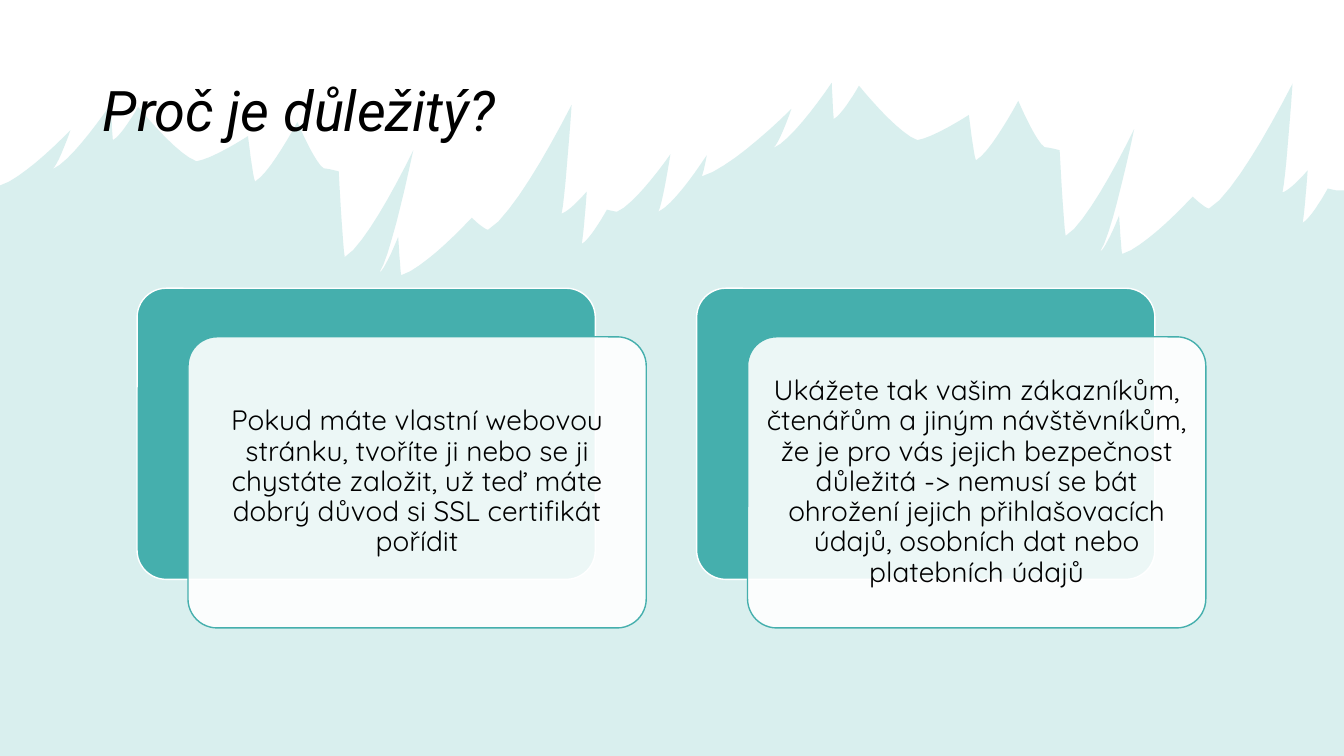
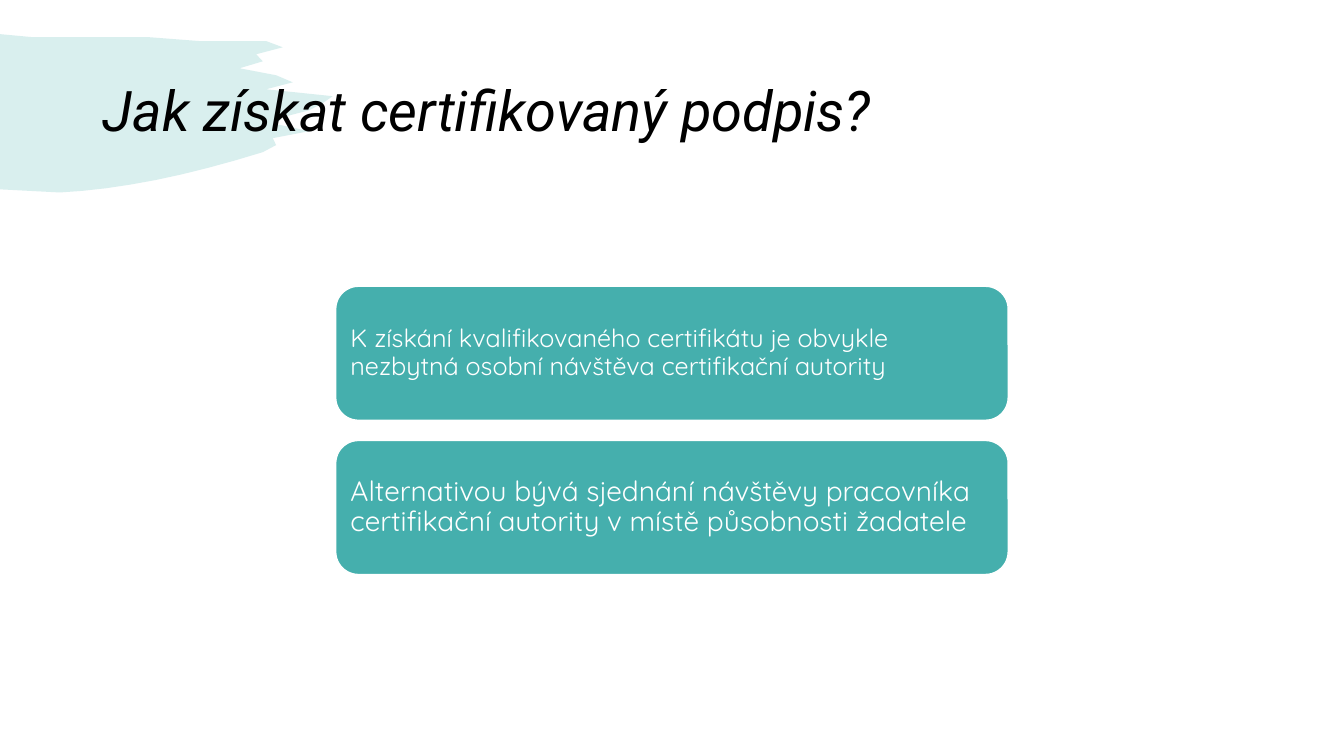
from collections import namedtuple

from lxml.etree import SubElement
from pptx import Presentation
from pptx.dml.color import RGBColor
from pptx.enum.shapes import MSO_SHAPE
from pptx.enum.text import MSO_ANCHOR, MSO_AUTO_SIZE, PP_ALIGN
from pptx.oxml.ns import qn
from pptx.util import Inches, Pt

TEAL = RGBColor(0x45, 0xAF, 0xAD)
WHITE = RGBColor(0xFF, 0xFF, 0xFF)
BLACK = RGBColor(0x00, 0x00, 0x00)
TITLE_FONT = "Roboto"
BODY_FONT = "Quicksand"
TITLE_ONLY = 5
UNITS_PER_INCH = 1000
CURVE_STEPS = 8

Box = namedtuple("Box", "left top width height")
Point = namedtuple("Point", "x y")
Spike = namedtuple("Spike", "tip notch")

SLIDE = Box(0, 0, 13.33, 7.5)
TITLE_BOX = Box(0.92, 0.4, 11.5, 1.45)
CARDS_BOX = Box(1.36, 2.86, 10.6, 3.37)
BARS_BOX = Box(3.33, 2.84, 6.67, 2.86)
BRUSH_BOX = Box(0, 0.37, 3.3, 1.54)

SPLASH_START = Point(0, 1.84)
SPLASH_PERIOD = Point(7.15, -0.21)
SPLASH_BEND = 1.3
SPIKES = [
    Spike(Point(0.7, 1.29), Point(0.52, 1.68)),
    Spike(Point(1.1, 1.03), Point(1.12, 1.39)),
    Spike(Point(1.37, 1.06), Point(1.95, 1.6)),
    Spike(Point(2.46, 1.35), Point(2.53, 1.8)),
    Spike(Point(2.95, 1.21), Point(3.21, 1.67)),
    Spike(Point(3.36, 1.7), Point(3.42, 2.55)),
    Spike(Point(4.1, 1.49), Point(3.76, 2.71)),
    Spike(Point(3.95, 2.35), Point(3.98, 2.73)),
    Spike(Point(4.68, 2.16), Point(4.84, 2.28)),
    Spike(Point(5.67, 1.04), Point(5.57, 2.12)),
    Spike(Point(5.82, 1.9), Point(5.77, 2.42)),
    Spike(Point(6.02, 2.08), Point(6.12, 2.1)),
    Spike(Point(6.65, 1.53), Point(6.53, 2.1)),
    Spike(Point(7.01, 1.54), Point(6.96, 1.75)),
]
BRISTLE_REACHES = [0.85, 0.77, 0.79, 0.72, 0.83, 0.88, 0.8, 1,
                   0.97, 0.93, 0.85, 0.83, 0.93, 0.82, 0.83, 0.79]


def split(box, count, gap, across):
    """Divide a box into equal columns (across) or rows with a fixed gap."""
    length = box.width if across else box.height
    size = (length - gap * (count - 1)) / count
    steps = [index * (size + gap) for index in range(count)]
    if across:
        return [Box(box.left + step, box.top, size, box.height) for step in steps]
    return [Box(box.left, box.top + step, box.width, size) for step in steps]


def set_alpha(shape, percent):
    """Make the solid fill of a shape partly transparent."""
    color = shape.fill._xPr.find(qn("a:solidFill"))[0]
    SubElement(color, qn("a:alpha")).set("val", str(percent * 1000))


def draw_outline(page, points):
    """Draw a closed pale teal area through points given in inches."""
    corners = [(round(x * UNITS_PER_INCH), round(y * UNITS_PER_INCH))
               for x, y in points]
    builder = page.shapes.build_freeform(
        *corners[0], scale=Inches(1) / UNITS_PER_INCH)
    builder.add_line_segments(corners[1:], close=True)
    area = builder.convert_to_shape()
    area.shadow.inherit = False
    area.fill.solid()
    area.fill.fore_color.rgb = TEAL
    area.line.fill.background()
    set_alpha(area, 20)


def flank(notch, tip):
    """Return a curve that leaves the notch gently and steepens to the tip."""
    shares = [step / CURVE_STEPS for step in range(CURVE_STEPS + 1)]
    return [Point(notch.x + (tip.x - notch.x) * share,
                  notch.y + (tip.y - notch.y) * share ** SPLASH_BEND)
            for share in shares]


def bow(start, control, end):
    """Return points on a quadratic curve bent towards the control point."""
    shares = [step / CURVE_STEPS for step in range(CURVE_STEPS + 1)]
    return [Point(*((1 - share) ** 2 * first + 2 * share * (1 - share) * middle
                    + share ** 2 * last
                    for first, middle, last in zip(start, control, end)))
            for share in shares]


def draw_splash(page, box):
    """Fill a box below a row of spikes that repeats until its right edge."""
    right, bottom = box.left + box.width, box.top + box.height
    crest, notch = [], SPLASH_START
    for turn in range(2):
        shift = Point(SPLASH_PERIOD.x * turn, SPLASH_PERIOD.y * turn)
        for spike in SPIKES:
            tip, next_notch = [Point(point.x + shift.x, point.y + shift.y)
                               for point in spike]
            crest += flank(notch, tip) + flank(next_notch, tip)[::-1]
            notch = next_notch
    visible = [point for point in crest if point.x <= right]
    edge = Point(right, visible[-1].y)
    draw_outline(page, visible + [edge, Point(right, bottom), Point(box.left, bottom)])


def draw_brush(page, box):
    """Draw a brush stroke with one bristle tip per equal row on its right."""
    def place(across, down):
        return Point(box.left + box.width * across, box.top + box.height * down)

    first_row, row = 0.065, 0.045
    bristles = [place(reach, first_row + row * index)
                for index, reach in enumerate(BRISTLE_REACHES)]
    top = [place(0, -0.02), place(0.1, 0), place(0.45, 0), place(0.6, 0.025),
           place(0.8, 0.025)]
    belly = bow(bristles[-1], place(0.45, 0.97), place(0.18, 1))
    draw_outline(page, top + bristles + belly + [place(0, 0.98)])


def add_round_box(page, box, fill, line, corner):
    """Add a rounded rectangle with a thin outline."""
    shape = page.shapes.add_shape(
        MSO_SHAPE.ROUNDED_RECTANGLE, *[Inches(value) for value in box])
    shape.adjustments[0] = corner
    shape.shadow.inherit = False
    shape.fill.solid()
    shape.fill.fore_color.rgb = fill
    shape.line.color.rgb = line
    shape.line.width = Pt(1)
    return shape


def write_text(shape, text, font, size, color, align, inset):
    """Put one formatted, vertically centred paragraph into a shape."""
    frame = shape.text_frame
    frame.text = text
    frame.word_wrap = True
    frame.auto_size = MSO_AUTO_SIZE.NONE
    frame.vertical_anchor = MSO_ANCHOR.MIDDLE
    frame.margin_left = frame.margin_right = Inches(inset)
    frame.margin_top = frame.margin_bottom = Inches(inset)
    para = frame.paragraphs[0]
    para.alignment = align
    para.line_spacing = 0.9
    span = para.runs[0]
    span.font.name = font
    span.font.size = Pt(size)
    span.font.color.rgb = color
    return span


def add_titled_page(deck, title_text, draw_backdrop, box):
    """Add a slide whose formatted title lies in front of its backdrop."""
    page = deck.slides.add_slide(deck.slide_layouts[TITLE_ONLY])
    draw_backdrop(page, box)
    title = page.shapes.title
    title.left, title.top, title.width, title.height = map(Inches, TITLE_BOX)
    span = write_text(title, title_text, TITLE_FONT, 40, BLACK, PP_ALIGN.LEFT, 0.1)
    span.font.italic = True
    page.shapes._spTree.append(title._element)
    return page


def add_card(page, box, text):
    """Add a teal card with a translucent text card overlapping it."""
    width, height = box.width * 0.9, box.height * 0.857
    back = Box(box.left, box.top, width, height)
    front = Box(box.left + box.width - width, box.top + box.height - height,
                width, height)
    add_round_box(page, back, TEAL, WHITE, 0.1)
    card = add_round_box(page, front, WHITE, TEAL, 0.1)
    set_alpha(card, 90)
    write_text(card, text, BODY_FONT, 20, BLACK, PP_ALIGN.CENTER, 0.08)


def add_bar(page, box, text, size):
    """Add a teal bar with white text."""
    bar = add_round_box(page, box, TEAL, WHITE, 0.17)
    write_text(bar, text, BODY_FONT, size, WHITE, PP_ALIGN.LEFT, 0.08)


def build_reasons(deck):
    """Build the slide with two overlapping card pairs."""
    page = add_titled_page(deck, "Proč je důležitý?", draw_splash, SLIDE)
    reasons = [
        "Pokud máte vlastní webovou stránku, tvoříte ji nebo se ji chystáte "
        "založit, už teď máte dobrý důvod si SSL certifikát pořídit",
        "Ukážete tak vašim zákazníkům, čtenářům a jiným návštěvníkům, že je "
        "pro vás jejich bezpečnost důležitá -> nemusí se bát ohrožení jejich "
        "přihlašovacích údajů, osobních dat nebo platebních údajů",
    ]
    for box, text in zip(split(CARDS_BOX, len(reasons), 0.5, True), reasons):
        add_card(page, box, text)


def build_options(deck):
    """Build the slide with two stacked bars."""
    page = add_titled_page(
        deck, "Jak získat certifikovaný podpis?", draw_brush, BRUSH_BOX)
    options = [
        ("K získání kvalifikovaného certifikátu je obvykle nezbytná osobní "
         "návštěva certifikační autority", 18),
        ("Alternativou bývá sjednání návštěvy pracovníka certifikační "
         "autority v místě působnosti žadatele", 20),
    ]
    for box, (text, size) in zip(split(BARS_BOX, len(options), 0.2, False), options):
        add_bar(page, box, text, size)


def main():
    """Create the deck and save it."""
    deck = Presentation()
    deck.slide_width = Inches(SLIDE.width)
    deck.slide_height = Inches(SLIDE.height)
    build_reasons(deck)
    build_options(deck)
    deck.save("out.pptx")


if __name__ == "__main__":
    main()
